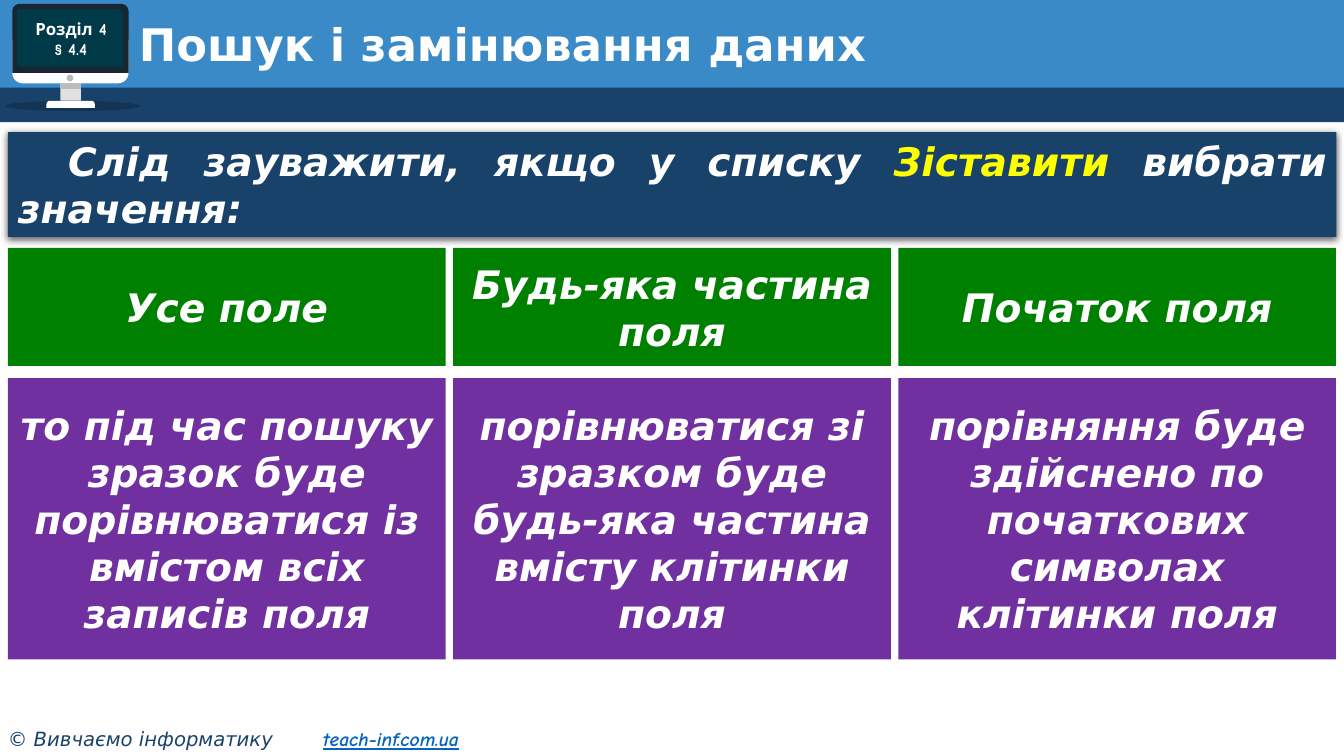
from lxml import etree
from pptx import Presentation
from pptx.dml.color import RGBColor
from pptx.enum import shapes, text
from pptx.oxml import ns
from pptx.util import Cm, Pt

WHITE = RGBColor(0xFF, 0xFF, 0xFF)
BLACK = RGBColor(0, 0, 0)
BLUE = RGBColor(0x39, 0x8A, 0xC7)
NAVY = RGBColor(0x19, 0x42, 0x6B)
GREEN = RGBColor(0, 0x80, 0)
PURPLE = RGBColor(0x70, 0x30, 0xA0)
YELLOW = RGBColor(0xFF, 0xFF, 0)
LINK = RGBColor(0x05, 0x63, 0xC1)
BEZEL = RGBColor(0x18, 0x26, 0x32)
SCREEN = RGBColor(0, 0x39, 0x48)
LIGHT_GREY = RGBColor(0xE1, 0xE1, 0xE1)
GREY = RGBColor(0xBB, 0xBB, 0xBB)

MAIN_FONT = "DejaVu Sans"
COMIC_FONT = "Comic Neue"
SHAPE = shapes.MSO_SHAPE
ALIGN = text.PP_ALIGN
ANCHOR = text.MSO_ANCHOR

COLUMNS = [
    ("Усе поле",
     "то під час пошуку зразок буде порівнюватися із вмістом всіх записів поля"),
    ("Будь-яка частина поля",
     "порівнюватися зі зразком буде будь-яка частина вмісту клітинки поля"),
    ("Початок поля",
     "порівняння буде здійснено по початкових символах клітинки поля"),
]


def add_block(s, kind, box, color, adjustments=()):
    sp = s.shapes.add_shape(kind, *map(Cm, box))
    sp.shadow.inherit = False
    sp.fill.solid()
    sp.fill.fore_color.rgb = color
    sp.line.fill.background()
    for i, value in enumerate(adjustments):
        sp.adjustments[i] = value
    return sp


def add_label(s, box, anchor=ANCHOR.MIDDLE):
    tf = s.shapes.add_textbox(*map(Cm, box)).text_frame
    tf.word_wrap = True
    tf.vertical_anchor = anchor
    return tf


def add_run(p, words, size, color=WHITE, font=MAIN_FONT, bold=True, italic=True):
    r = p.add_run()
    r.text = words
    r.font.size = Pt(size)
    r.font.name = font
    r.font.bold = bold
    r.font.italic = italic
    r.font.color.rgb = color
    return r


def set_alpha(sp, percent):
    clr = sp._element.spPr.find(".//" + ns.qn("a:srgbClr"))
    etree.SubElement(clr, ns.qn("a:alpha"), val=str(percent * 1000))


def add_soft_shadow(sp):
    effects = sp._element.spPr.find(ns.qn("a:effectLst"))
    shadow = etree.SubElement(
        effects, ns.qn("a:outerShdw"), blurRad=str(Pt(4.5)), dist=str(Pt(1.5)),
        dir="5400000", algn="t", rotWithShape="0")
    clr = etree.SubElement(shadow, ns.qn("a:srgbClr"), val="000000")
    etree.SubElement(clr, ns.qn("a:alpha"), val="63000")


def add_monitor(s):
    set_alpha(add_block(s, SHAPE.OVAL, (0.13, 2.54, 3.4, 0.26), BLACK), 20)
    add_block(s, SHAPE.ROUND_2_SAME_RECTANGLE, (0.31, 1, 2.93, 1.1), WHITE, (0, 0.24))
    add_block(s, SHAPE.ROUND_2_SAME_RECTANGLE, (0.31, 0.1, 2.93, 1.74), BEZEL, (0.1, 0))
    add_block(s, SHAPE.RECTANGLE, (1.52, 2.1, 0.52, 0.44), LIGHT_GREY)
    add_block(s, SHAPE.RECTANGLE, (1.52, 2.1, 0.52, 0.14), GREY)
    add_block(s, SHAPE.ROUND_2_SAME_RECTANGLE, (1.17, 2.54, 1.22, 0.18), WHITE, (0.5, 0))
    add_block(s, SHAPE.OVAL, (1.68, 1.88, 0.17, 0.17), GREY)
    add_block(s, SHAPE.ROUNDED_RECTANGLE, (0.43, 0.23, 2.67, 1.45), SCREEN, (0.04,))
    tf = add_label(s, (0.33, 0.23, 2.92, 1.5))
    for p, words in zip((tf.paragraphs[0], tf.add_paragraph()), ("Розділ 4", "§ 4.4")):
        p.alignment = ALIGN.CENTER
        add_run(p, words, 12, font=COMIC_FONT, italic=False)


def add_header(s):
    add_block(s, SHAPE.RECTANGLE, (0, 0, 33.87, 2.31), BLUE)
    add_block(s, SHAPE.RECTANGLE, (0, 2.21, 33.87, 0.87), NAVY)
    add_monitor(s)
    p = add_label(s, (3.25, 0.46, 29.77, 1.47)).paragraphs[0]
    p.line_spacing = 0.9
    add_run(p, "Пошук і замінювання даних", 32, italic=False)


def add_banner(s):
    sp = add_block(s, SHAPE.RECTANGLE, (0.2, 3.33, 33.48, 2.64), NAVY)
    add_soft_shadow(sp)
    tf = sp.text_frame
    tf.word_wrap = True
    tf.vertical_anchor = ANCHOR.TOP
    p = tf.paragraphs[0]
    p.alignment = ALIGN.JUSTIFY
    p._p.get_or_add_pPr().set("indent", str(Cm(1.27)))
    add_run(p, "Слід зауважити, якщо у списку ", 28)
    add_run(p, "Зіставити", 28, YELLOW)
    add_run(p, " вибрати значення:", 28)


def add_card(s, box, color, words):
    tf = add_block(s, SHAPE.RECTANGLE, box, color).text_frame
    tf.word_wrap = True
    tf.vertical_anchor = ANCHOR.MIDDLE
    p = tf.paragraphs[0]
    p.alignment = ALIGN.CENTER
    add_run(p, words, 28)


def add_footer(s):
    p = add_label(s, (-0.05, 18.19, 13.28, 0.86), ANCHOR.TOP).paragraphs[0]
    tabs = etree.SubElement(p._p.get_or_add_pPr(), ns.qn("a:tabLst"))
    etree.SubElement(tabs, ns.qn("a:tab"), pos=str(Cm(7.94)), algn="l")
    add_run(p, "© Вивчаємо інформатику\t", 14, NAVY, bold=False)
    add_run(p, "teach-inf.com.ua", 14, LINK, COMIC_FONT).font.underline = True


def main():
    prs = Presentation()
    prs.slide_width, prs.slide_height = Cm(33.87), Cm(19.05)
    s = prs.slides.add_slide(prs.slide_layouts[6])
    add_header(s)
    add_banner(s)
    for i, (heading, meaning) in enumerate(COLUMNS):
        left = 0.2 + i * 11.22
        add_card(s, (left, 6.25, 11.03, 2.97), GREEN, heading)
        add_card(s, (left, 9.53, 11.03, 7.09), PURPLE, meaning)
    add_footer(s)
    prs.save("out.pptx")


if __name__ == "__main__":
    main()
